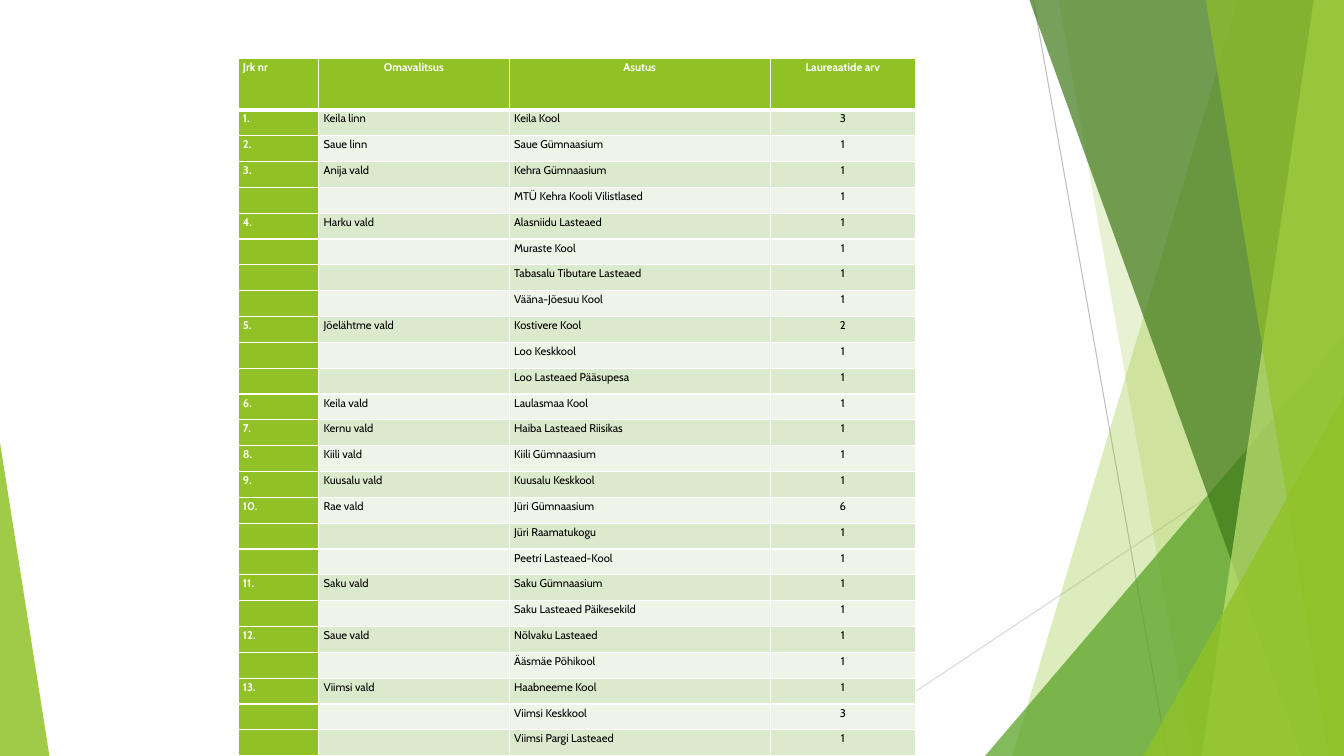
import dataclasses

import pptx
import pptx.dml.color
import pptx.enum.shapes
import pptx.enum.text
import pptx.oxml.ns
import pptx.util
from lxml import etree

Inches = pptx.util.Inches


@dataclasses.dataclass(frozen=True)
class Theme:
    """Colours, type and line sizes of the slide."""
    font: str = "Cabin"
    size: float = 8
    line_spacing: float = 1.15
    lime: str = "90C226"
    green: str = "54A021"
    forest: str = "3F7819"
    pale: str = "C0E474"
    band_dark: str = "DBE9CD"
    band_light: str = "EEF4E8"
    white: str = "FFFFFF"
    black: str = "000000"
    grey: str = "BFBFBF"
    light_grey: str = "D9D9D9"
    hairline: float = 0.75
    border: float = 1
    header_border: float = 3


@dataclasses.dataclass(frozen=True)
class Box:
    """A region in inches."""
    left: float
    top: float
    width: float
    height: float

    @property
    def right(self):
        """Return the right edge."""
        return self.left + self.width

    @property
    def bottom(self):
        """Return the bottom edge."""
        return self.top + self.height


THEME = Theme()
HEADINGS = ("Jrk nr", "Omavalitsus", "Asutus", "Laureaatide arv")
COLUMN_WIDTHS = (0.8, 1.89, 2.59, 1.44)
HEADER_HEIGHT = 0.51
LAUREATES = (
    ("Keila linn", (("Keila Kool", 3),)),
    ("Saue linn", (("Saue Gümnaasium", 1),)),
    ("Anija vald", (("Kehra Gümnaasium", 1), ("MTÜ Kehra Kooli Vilistlased", 1))),
    ("Harku vald", (("Alasniidu Lasteaed", 1), ("Muraste Kool", 1),
                    ("Tabasalu Tibutare Lasteaed", 1), ("Vääna-Jõesuu Kool", 1))),
    ("Jõelähtme vald", (("Kostivere Kool", 2), ("Loo Keskkool", 1),
                        ("Loo Lasteaed Pääsupesa", 1))),
    ("Keila vald", (("Laulasmaa Kool", 1),)),
    ("Kernu vald", (("Haiba Lasteaed Riisikas", 1),)),
    ("Kiili vald", (("Kiili Gümnaasium", 1),)),
    ("Kuusalu vald", (("Kuusalu Keskkool", 1),)),
    ("Rae vald", (("Jüri Gümnaasium", 6), ("Jüri Raamatukogu", 1),
                  ("Peetri Lasteaed-Kool", 1))),
    ("Saku vald", (("Saku Gümnaasium", 1), ("Saku Lasteaed Päikesekild", 1))),
    ("Saue vald", (("Nõlvaku Lasteaed", 1), ("Ääsmäe Põhikool", 1))),
    ("Viimsi vald", (("Haabneeme Kool", 1), ("Viimsi Keskkool", 3),
                     ("Viimsi Pargi Lasteaed", 1))),
)


def rgb(colour):
    """Return a colour object for a hex string."""
    return pptx.dml.color.RGBColor.from_string(colour)


def add_xml(parent, tag, **attributes):
    """Append a DrawingML element and return it."""
    return etree.SubElement(parent, pptx.oxml.ns.qn(tag), attributes)


def tint(shape, colour, opacity):
    """Fill a shape with a see-through colour, without outline or shadow."""
    shape.shadow.inherit = False
    shape.line.fill.background()
    shape.fill.solid()
    shape.fill.fore_color.rgb = rgb(colour)
    swatch = shape.fill._xPr.find(".//" + pptx.oxml.ns.qn("a:srgbClr"))
    add_xml(swatch, "a:alpha", val=str(opacity * 1000))


def add_ray(slide, start, end, colour):
    """Draw a thin straight line between two points."""
    ray = slide.shapes.add_connector(
        pptx.enum.shapes.MSO_CONNECTOR.STRAIGHT, *map(Inches, start + end))
    ray.line.color.rgb = rgb(colour)
    ray.line.width = pptx.util.Pt(THEME.hairline)
    add_xml(ray._element.spPr, "a:effectLst")


def add_facet(slide, box, top_depth, bottom_depth, colour, opacity):
    """Draw a slanted facet that reaches the right edge of the box."""
    corners = [(box.right - top_depth, box.top), (box.right, box.top),
               (box.right, box.bottom), (box.right - bottom_depth, box.bottom)]
    points = [(Inches(x), Inches(y)) for x, y in corners]
    outline = slide.shapes.build_freeform(*points[0], scale=1.0)
    outline.add_line_segments(points[1:], close=True)
    tint(outline.convert_to_shape(), colour, opacity)


def add_corner(slide, box, apex, colour, opacity):
    """Fill the box with a right triangle whose apex is at 0 (left) or 1 (right)."""
    corner = slide.shapes.add_shape(
        pptx.enum.shapes.MSO_SHAPE.ISOSCELES_TRIANGLE,
        *map(Inches, (box.left, box.top, box.width, box.height)))
    corner.adjustments[0] = apex
    tint(corner, colour, opacity)


def add_facets(slide, box):
    """Draw the layered facets along the right side of the box."""
    def right_corner(width, height, colour, opacity):
        """Draw a triangle in the bottom right corner of the box."""
        place = Box(box.right - width, box.bottom - height, width, height)
        add_corner(slide, place, 1, colour, opacity)

    add_ray(slide, (box.right - 3.08, box.top), (box.right - 1.75, box.bottom), THEME.grey)
    add_ray(slide, (box.right, box.top + 4.03), (box.left, box.bottom), THEME.light_grey)
    add_facet(slide, box, 1.05, 3.29, THEME.lime, 30)
    add_facet(slide, box, 2.83, 1.5, THEME.lime, 20)
    right_corner(3.56, 4.17, THEME.green, 72)
    add_facet(slide, box, 3.12, 0.42, THEME.forest, 70)
    add_facet(slide, box, 0.3, 1.41, THEME.pale, 70)
    add_facet(slide, box, 1.37, 0.15, THEME.lime, 65)
    right_corner(1.99, 3.57, THEME.lime, 80)


def laureate_rows():
    """Return table rows, naming each municipality on its first row only."""
    rows = []
    for number, (municipality, institutions) in enumerate(LAUREATES, 1):
        for place, (institution, count) in enumerate(institutions):
            lead = ("", "") if place else (f"{number}.", municipality)
            rows.append((*lead, institution, str(count)))
    return rows


def style_cell(cell, text, fill, emphasised, centred, top_border, bottom_border):
    """Write and format one table cell."""
    cell.margin_left = cell.margin_right = Inches(0.05)
    cell.margin_top = cell.margin_bottom = 0
    cell.text_frame.text = text
    entry = cell.text_frame.paragraphs[0]
    entry.line_spacing = THEME.line_spacing
    if centred:
        entry.alignment = pptx.enum.text.PP_ALIGN.CENTER
    for run in entry.runs:
        run.font.name = THEME.font
        run.font.size = pptx.util.Pt(THEME.size)
        run.font.bold = emphasised
        run.font.color.rgb = rgb(THEME.white if emphasised else THEME.black)
    if not text:
        add_xml(entry._p, "a:endParaRPr", sz=str(THEME.size * 100))
    properties = cell._tc.get_or_add_tcPr()
    borders = {"a:lnL": THEME.border, "a:lnR": THEME.border,
               "a:lnT": top_border, "a:lnB": bottom_border}
    for tag, width in borders.items():
        border = add_xml(properties, tag, w=str(pptx.util.Pt(width)))
        add_xml(add_xml(border, "a:solidFill"), "a:srgbClr", val=THEME.white)
    cell.fill.solid()
    cell.fill.fore_color.rgb = rgb(fill)


def add_laureate_table(slide, box):
    """Fill the box with the table of laureates by institution."""
    rows = [HEADINGS, *laureate_rows()]
    table = slide.shapes.add_table(
        len(rows), len(HEADINGS),
        *map(Inches, (box.left, box.top, box.width, box.height))).table
    for column, width in zip(table.columns, COLUMN_WIDTHS):
        column.width = Inches(width)
    row_height = (box.height - HEADER_HEIGHT) / (len(rows) - 1)
    for r, texts in enumerate(rows):
        table.rows[r].height = Inches(row_height if r else HEADER_HEIGHT)
        band = THEME.band_dark if r % 2 else THEME.band_light
        for c, text in enumerate(texts):
            emphasised = r == 0 or c == 0
            style_cell(
                table.cell(r, c), text, THEME.lime if emphasised else band, emphasised,
                centred=c == 3 or (r == 0 and c > 0),
                top_border=THEME.header_border if r == 1 else THEME.border,
                bottom_border=THEME.header_border if r == 0 else THEME.border)


def main():
    """Build the slide and save it."""
    deck = pptx.Presentation()
    deck.slide_width, deck.slide_height = Inches(13.33), Inches(7.5)
    slide = deck.slides.add_slide(deck.slide_layouts.get_by_name("Blank"))
    add_facets(slide, Box(8.12, 0, 5.21, 7.5))
    add_corner(slide, Box(0, 4.39, 0.49, 3.11), 0, THEME.lime, 85)
    add_laureate_table(slide, Box(2.36, 0.58, 6.72, 6.92))
    deck.save("out.pptx")


if __name__ == "__main__":
    main()
